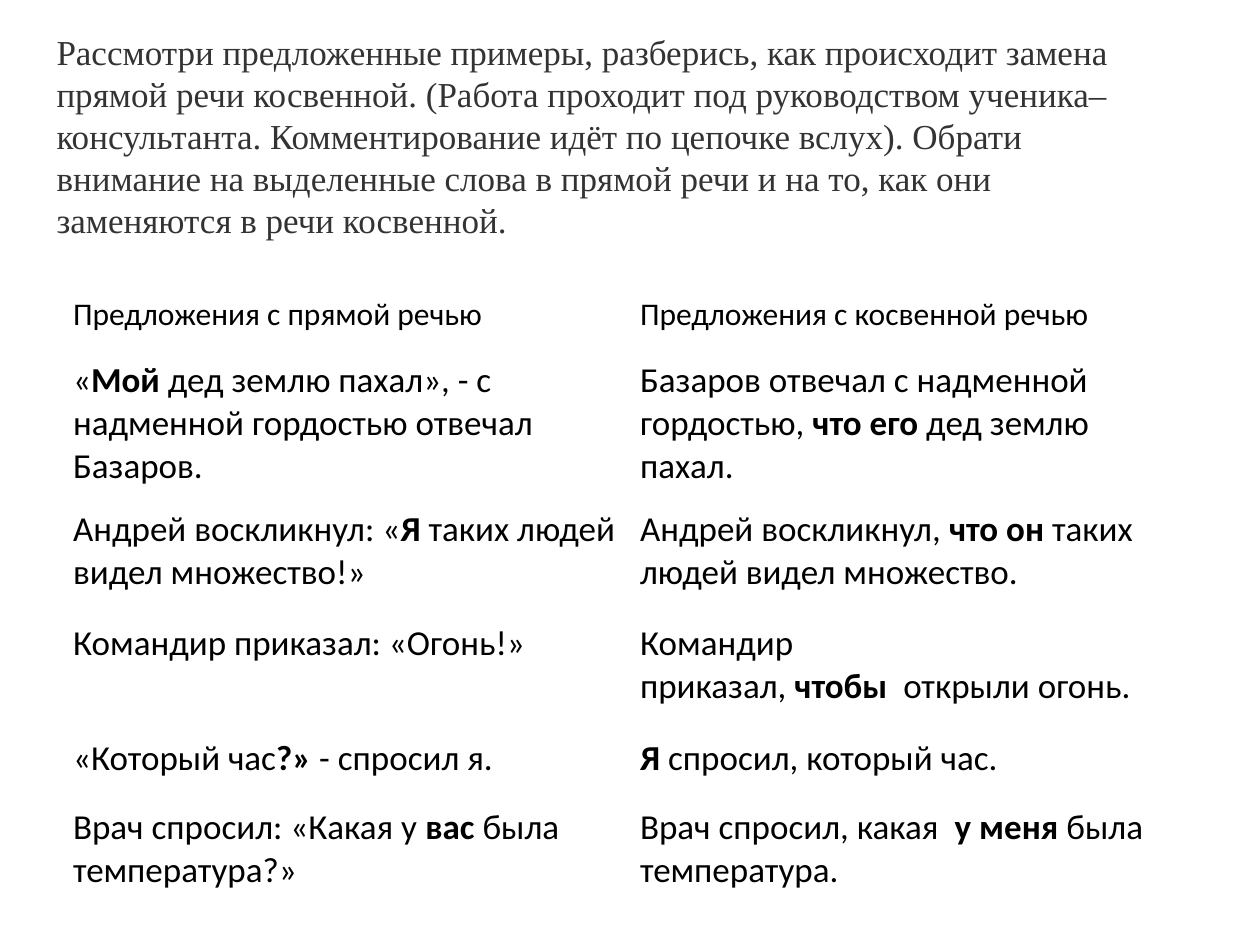
from pptx import Presentation
from pptx.dml.color import RGBColor
from pptx.enum.text import MSO_ANCHOR as Anchor
from pptx.util import Inches, Pt

# In the texts, * switches bold on and off and ~ is a no-break space.
TASK = (
    "Рассмотри предложенные примеры, разберись, как происходит замена прямой "
    "речи косвенной. (Работа проходит под руководством ученика–консультанта. "
    "Комментирование идёт по цепочке вслух). Обрати внимание на выделенные "
    "слова в прямой речи и на то, как они заменяются в речи косвенной."
)
ROWS = [
    ("Предложения с прямой речью", "Предложения с косвенной речью"),
    ("«*Мой*~дед землю пахал», - с надменной гордостью отвечал Базаров.",
     "Базаров отвечал с надменной гордостью,~*что его*~дед землю пахал."),
    ("Андрей воскликнул: «*Я*~таких людей видел множество!»",
     "Андрей воскликнул,~*что он*~таких людей видел множество."),
    ("Командир приказал: «Огонь!»",
     "Командир приказал,~*чтобы~~*открыли огонь."),
    ("«Который час*?»*~- спросил я.", "*Я*~спросил, который час."),
    ("Врач спросил: «Какая у~*вас*~была температура?»",
     "Врач спросил, какая~*~у меня*~была температура."),
]
LOW, HIGH = 0.55, 0.91
HEIGHTS = [LOW, HIGH, HIGH, HIGH, LOW, HIGH]
WIDTH, HEIGHT = 10, 7.5
EDGE = 0.5
TOP = 2.22
PAD = 0.08


def color(code):
    return RGBColor.from_string(code)


def write(frame, text, size=20, font="Calibri", ink="000000"):
    para = frame.paragraphs[0]
    for i, part in enumerate(text.replace("~", chr(160)).split("*")):
        if part:
            run = para.add_run()
            run.text = part
            run.font.size = Pt(size)
            run.font.name = font
            run.font.bold = i % 2 == 1
            run.font.color.rgb = color(ink)


def add_task(slide):
    box = slide.shapes.add_textbox(
        Inches(0.35), Inches(0.13), Inches(8.98), Inches(2.39))
    frame = box.text_frame
    frame.word_wrap = True
    frame.vertical_anchor = Anchor.TOP
    frame.margin_top = Inches(0.11)
    write(frame, TASK, font="Times New Roman", ink="333333")


def add_pairs(slide):
    cols = len(ROWS[0])
    wide = WIDTH - 2 * EDGE
    table = slide.shapes.add_table(
        len(ROWS), cols, Inches(EDGE), Inches(TOP),
        Inches(wide), Inches(sum(HEIGHTS))).table
    table.first_row = table.horz_banding = False
    for col in table.columns:
        col.width = Inches(wide / cols)
    for r, (texts, high) in enumerate(zip(ROWS, HEIGHTS)):
        table.rows[r].height = Inches(high)
        for c, text in enumerate(texts):
            cell = table.cell(r, c)
            cell.fill.solid()
            cell.fill.fore_color.rgb = color("FFFFFF")
            cell.margin_left = cell.margin_right = Inches(PAD)
            cell.margin_top = cell.margin_bottom = Inches(PAD)
            cell.vertical_anchor = Anchor.TOP if r else Anchor.MIDDLE
            write(cell.text_frame, text, size=20 if r else 18)


def main():
    deck = Presentation()
    deck.slide_width, deck.slide_height = Inches(WIDTH), Inches(HEIGHT)
    slide = deck.slides.add_slide(deck.slide_layouts[6])
    add_pairs(slide)
    add_task(slide)
    deck.save("out.pptx")


if __name__ == "__main__":
    main()
